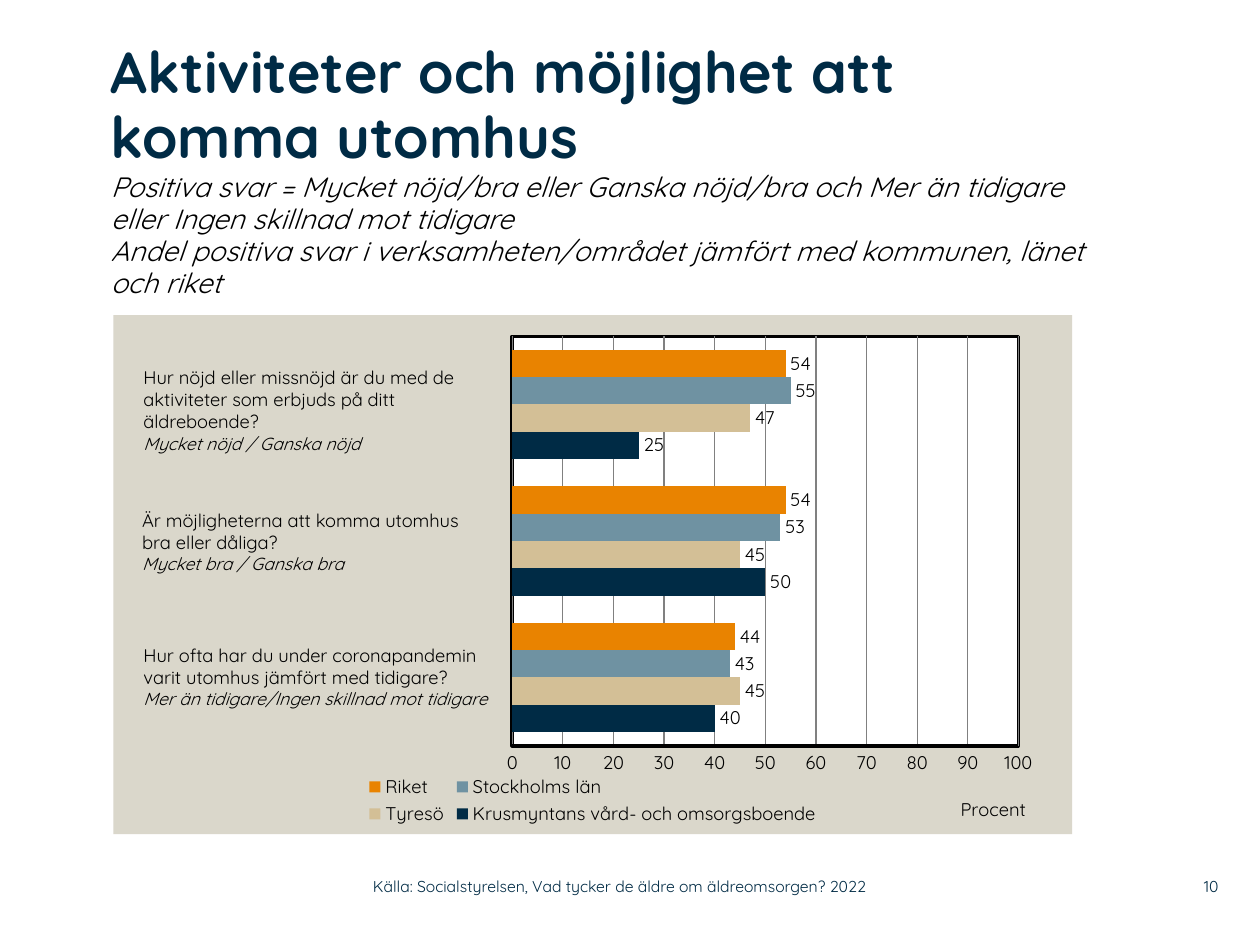
"""Build a slide comparing activity and outdoor survey answers in a bar chart."""
import pptx
import pptx.chart.data
import pptx.dml.color
import pptx.enum.chart
import pptx.enum.text
import pptx.oxml
import pptx.oxml.ns
import pptx.util
from pptx.util import Inches

FONT = "Quicksand"
COLORS = {"navy": "002B45", "sand": "D3BF96", "steel": "6F92A2", "orange": "E98300",
          "panel": "DAD7CB", "white": "FFFFFF", "black": "000000", "grid": "808080"}
SERIES = [
    ("Krusmyntans vård- och omsorgsboende", (40, 50, 25), "navy"),
    ("Tyresö", (45, 45, 47), "sand"),
    ("Stockholms län", (43, 53, 55), "steel"),
    ("Riket", (44, 54, 54), "orange"),
]
QUESTIONS = [
    (1.04, 2.86, 0.98, ["Hur nöjd eller missnöjd är du med de aktiviteter som erbjuds på ditt äldreboende?"],
     "Mycket nöjd / Ganska nöjd"),
    (1.03, 3.99, 0.81, ["Är möjligheterna att komma utomhus", "bra eller dåliga?"],
     "Mycket bra / Ganska bra"),
    (1.04, 5.06, 0.79, ["Hur ofta har du under coronapandemin varit utomhus jämfört med tidigare?"],
     "Mer än tidigare/Ingen skillnad mot tidigare"),
]
EXPLANATION = [
    "Positiva svar = Mycket nöjd/bra eller Ganska nöjd/bra och Mer än tidigare eller Ingen skillnad mot tidigare",
    "Andel positiva svar i verksamheten/området jämfört med kommunen, länet och riket",
]


def rgb(name):
    return pptx.dml.color.RGBColor.from_string(COLORS[name])


def style_font(font, size=10.5, color="black", bold=False, italic=False):
    font.name = FONT
    font.size = pptx.util.Pt(size)
    font.bold = bold
    font.italic = italic
    font.color.rgb = rgb(color)


def add_span(para, text, **style):
    span = para.add_run()
    span.text = text
    style_font(span.font, **style)


def set_margins(frame, margin):
    frame.margin_left = frame.margin_right = Inches(margin)
    frame.margin_top = frame.margin_bottom = Inches(margin)


def add_title(page):
    title = page.shapes.title
    title.left, title.top = Inches(0.88), Inches(0.32)
    title.width, title.height = Inches(7.8), Inches(1.89)
    frame = title.text_frame
    set_margins(frame, 0)
    frame.word_wrap = True
    frame.auto_size = pptx.enum.text.MSO_AUTO_SIZE.NONE
    frame.vertical_anchor = pptx.enum.text.MSO_ANCHOR.TOP
    para = frame.paragraphs[0]
    para.alignment = pptx.enum.text.PP_ALIGN.LEFT
    para.line_spacing = 0.95
    add_span(para, "Aktiviteter och möjlighet att komma utomhus", size=33, color="navy", bold=True)
    for line in EXPLANATION:
        para.add_line_break()
        add_span(para, line, size=16, italic=True)


def add_box(page, left, top, width, height):
    box = page.shapes.add_textbox(Inches(left), Inches(top), Inches(width), Inches(height))
    box.text_frame.word_wrap = True
    return box.text_frame


def add_question(page, left, top, height, lines, answers):
    frame = add_box(page, left, top, 3.01, height)
    for index, line in enumerate(lines):
        para = frame.add_paragraph() if index else frame.paragraphs[0]
        add_span(para, line)
    add_span(frame.add_paragraph(), answers, size=10, italic=True)


def add_footer(page, text, left, width, alignment):
    frame = add_box(page, left, 6.89, width, 0.29)
    set_margins(frame, 0)
    frame.vertical_anchor = pptx.enum.text.MSO_ANCHOR.MIDDLE
    frame.paragraphs[0].alignment = alignment
    add_span(frame.paragraphs[0], text, size=9, color="navy")


def place(element, index, x, y, width=None, height=None, inner=False):
    """Give a chart part a fixed position as fractions of the chart."""
    for old in element.findall(pptx.oxml.ns.qn("c:layout")):
        element.remove(old)
    values = [("layoutTarget", "inner")] if inner else []
    values += [("xMode", "edge"), ("yMode", "edge"), ("x", x), ("y", y)]
    if width:
        values += [("w", width), ("h", height)]
    parts = "".join(f'<c:{tag} val="{value}"/>' for tag, value in values)
    element.insert(index, pptx.oxml.parse_xml(
        f'<c:layout {pptx.oxml.ns.nsdecls("c")}><c:manualLayout>{parts}</c:manualLayout></c:layout>'))


def area_format(color, line=""):
    outline = f'<a:ln w="25400">{solid(line)}</a:ln>' if line else "<a:ln><a:noFill/></a:ln>"
    return pptx.oxml.parse_xml(
        f'<c:spPr {pptx.oxml.ns.nsdecls("c", "a")}>{solid(color)}{outline}</c:spPr>')


def solid(color):
    return f'<a:solidFill><a:srgbClr val="{COLORS[color]}"/></a:solidFill>'


def format_axes(chart):
    chart.category_axis.visible = False
    axis = chart.value_axis
    axis.minimum_scale, axis.maximum_scale, axis.major_unit = 0, 100, 10
    axis.major_tick_mark = axis.minor_tick_mark = pptx.enum.chart.XL_TICK_MARK.NONE
    style_font(axis.tick_labels.font)
    for line, color, width in ((axis.format.line, "black", 2),
                               (axis.major_gridlines.format.line, "grid", 0.75)):
        line.color.rgb = rgb(color)
        line.width = pptx.util.Pt(width)
    title = axis.axis_title
    add_span(title.text_frame.paragraphs[0], "Procent")
    place(title._element, 1, 0.88, 0.92)


def add_survey_chart(page):
    data = pptx.chart.data.CategoryChartData(number_format="0")
    data.categories = ["1", "2", "3"]
    for name, values, _ in SERIES:
        data.add_series(name, values)
    chart = page.shapes.add_chart(
        pptx.enum.chart.XL_CHART_TYPE.BAR_CLUSTERED,
        Inches(0.9), Inches(2.5), Inches(7.61), Inches(4.12), data).chart
    chart.has_title = False
    style_font(chart.font)
    plot = chart.plots[0]
    plot.gap_width, plot.overlap = 100, 0
    plot.vary_by_categories = False
    for series, (_, _, color) in zip(plot.series, SERIES):
        series.format.fill.solid()
        series.format.fill.fore_color.rgb = rgb(color)
        labels = series.data_labels
        labels.show_value = True
        labels.position = pptx.enum.chart.XL_LABEL_POSITION.OUTSIDE_END
        style_font(labels.font)
    format_axes(chart)
    chart.has_legend = True
    chart.legend.position = pptx.enum.chart.XL_LEGEND_POSITION.BOTTOM
    chart.legend.include_in_layout = False
    style_font(chart.legend.font)
    place(chart.legend._element, 1, 0.26, 0.88, 0.48, 0.11)
    space = chart._chartSpace
    area = space.chart.plotArea
    place(area, 0, 0.416, 0.041, 0.528, 0.789, inner=True)
    area.append(area_format("white", "black"))
    space.chart.addnext(area_format("panel"))


def main():
    deck = pptx.Presentation()
    deck.slide_width, deck.slide_height = Inches(10), Inches(7.5)
    page = deck.slides.add_slide(deck.slide_layouts[5])
    add_title(page)
    add_survey_chart(page)
    for question in QUESTIONS:
        add_question(page, *question)
    align = pptx.enum.text.PP_ALIGN
    add_footer(page, "Källa: Socialstyrelsen, Vad tycker de äldre om äldreomsorgen? 2022", 2.96, 4.43, align.LEFT)
    add_footer(page, "10", 9.2, 0.47, align.RIGHT)
    deck.save("out.pptx")


if __name__ == "__main__":
    main()
